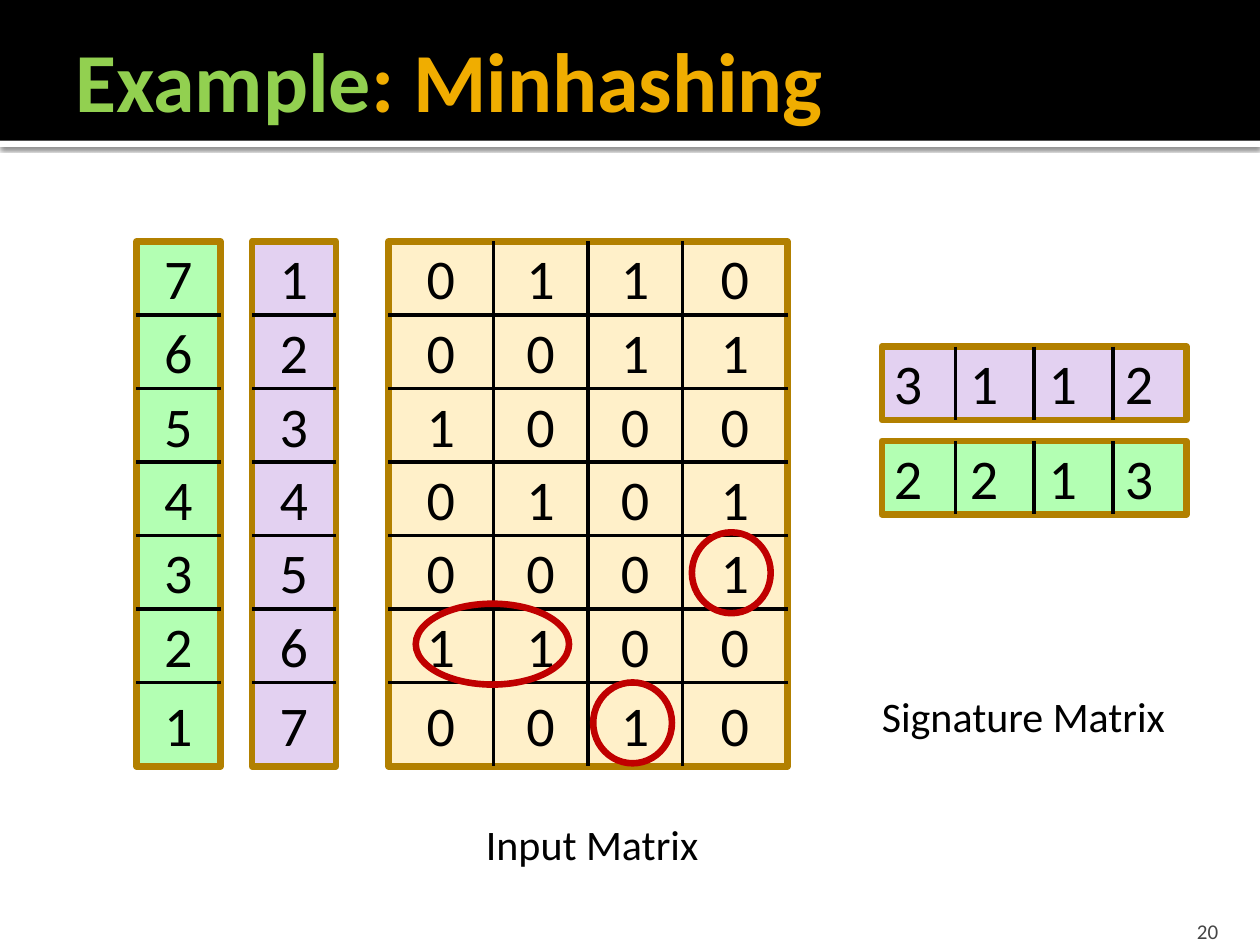
from dataclasses import dataclass

from lxml import etree
from pptx import Presentation
from pptx import util as u
from pptx.dml import color
from pptx.enum import shapes, text
from pptx.oxml import ns

COLS, ROWS = 120, 90
DIGIT_W, DIGIT_H = 5.1, 7.7
FONT = "Calibri"
COLORS = {
    "black": "000000", "white": "FFFFFF", "lime": "92D050", "amber": "F0AD00",
    "gray": "454545", "cream": "FFF0C9", "green": "B3FFB3", "violet": "E3D1F1",
    "border": "B28000", "red": "C00000",
}

prs = Presentation()
prs.slide_width, prs.slide_height = u.Inches(10), u.Inches(7.5)
s = prs.slides.add_slide(prs.slide_layouts[6])


@dataclass
class Matrix:
    col: float
    row: float
    width: float
    height: float
    fill: str
    values: list[str]
    first_col: float = 0
    col_step: float = 0
    row_step: float = 7
    shift: float = 0

    def col_edges(self) -> list[float]:
        inner = range(len(self.values[0]) - 1)
        return [self.col, *(self.col + self.first_col + i * self.col_step for i in inner),
                self.col + self.width]

    def row_edges(self) -> list[float]:
        inner = range(1, len(self.values))
        return [self.row, *(self.row + i * self.row_step for i in inner), self.row + self.height]


@dataclass
class Ring:
    col: float
    row: float
    width: float
    height: float = 7.7


def x(col: float) -> int:
    return round(prs.slide_width * col / COLS)


def y(row: float) -> int:
    return round(prs.slide_height * row / ROWS)


def rgb(name: str) -> color.RGBColor:
    return color.RGBColor.from_string(COLORS[name])


def add_figure(kind, col: float, row: float, width: float, height: float,
               fill: str | None = None, line: str | None = None):
    sp = s.shapes.add_shape(kind, x(col), y(row), x(width), y(height))
    sp.shadow.inherit = False
    if fill:
        sp.fill.solid()
        sp.fill.fore_color.rgb = rgb(fill)
    else:
        sp.fill.background()
    if line:
        sp.line.color.rgb = rgb(line)
        sp.line.width = u.Pt(3.78)
    else:
        sp.line.fill.background()
    return sp


def add_rule(col1: float, row1: float, col2: float, row2: float) -> None:
    c = s.shapes.add_connector(shapes.MSO_CONNECTOR.STRAIGHT, x(col1), y(row1), x(col2), y(row2))
    c.line.color.rgb = rgb("black")
    c.line.width = u.Pt(2.25)
    etree.SubElement(c._element.spPr, ns.qn("a:effectLst"))


def add_text(*runs: tuple[str, str], col: float, row: float, width: float, height: float,
             size: float, bold: bool = False, wrap: bool = False,
             align=text.PP_ALIGN.LEFT, anchor=text.MSO_ANCHOR.TOP) -> None:
    tf = s.shapes.add_textbox(x(col), y(row), x(width), y(height)).text_frame
    tf.word_wrap = wrap
    tf.vertical_anchor = anchor
    p = tf.paragraphs[0]
    p.alignment = align
    for words, shade in runs:
        r = p.add_run()
        r.text = words
        r.font.name, r.font.size, r.font.bold = FONT, u.Pt(size), bold
        r.font.color.rgb = rgb(shade)


def add_matrix(m: Matrix) -> None:
    add_figure(shapes.MSO_SHAPE.RECTANGLE, m.col, m.row, m.width, m.height, m.fill, "border")
    cols, rows = m.col_edges(), m.row_edges()
    for row in rows[1:-1]:
        add_rule(cols[0], row, cols[-1], row)
    for col in cols[1:-1]:
        add_rule(col, rows[0], col, rows[-1])
    for digits, top, bottom in zip(m.values, rows, rows[1:]):
        for digit, left, right in zip(digits, cols, cols[1:]):
            add_text((digit, "black"), col=(left + right - DIGIT_W) / 2 + m.shift,
                     row=(top + bottom - DIGIT_H) / 2, width=DIGIT_W, height=DIGIT_H, size=32)


def add_header() -> None:
    bar = add_figure(shapes.MSO_SHAPE.RECTANGLE, 0, 13.4, COLS, 0.6, "white")
    effects = bar._element.spPr.find(ns.qn("a:effectLst"))
    shadow = etree.SubElement(effects, ns.qn("a:outerShdw"), blurRad=str(u.Pt(2.5)),
                              dist=str(u.Pt(0.8)), dir="5400000", rotWithShape="0")
    shade = etree.SubElement(shadow, ns.qn("a:srgbClr"), val=COLORS["black"])
    etree.SubElement(shade, ns.qn("a:alpha"), val="60000")
    add_figure(shapes.MSO_SHAPE.RECTANGLE, 0, 0, COLS, 13.4, "black")
    add_text(("Example", "lime"), (": Minhashing", "amber"), col=6, row=2, width=114, height=11,
             size=48, bold=True, wrap=True, anchor=text.MSO_ANCHOR.MIDDLE)


MATRICES = [
    Matrix(37, 23, 38, 50, "cream",
           ["0110", "0011", "1000", "0101", "0001", "1100", "0010"], first_col=10, col_step=9),
    Matrix(13, 23, 8, 50, "green", list("7654321")),
    Matrix(24, 23, 8, 50, "violet", list("1234567")),
    Matrix(84, 42, 29, 7, "green", ["2213"], first_col=7, col_step=7.5, shift=-1),
    Matrix(84, 33, 29, 7, "violet", ["3112"], first_col=7, col_step=7.5, shift=-1),
]
RINGS = [Ring(39.6, 57.5, 14.6), Ring(56.5, 65, 7.5), Ring(65.9, 50.7, 7.5)]


def main() -> None:
    add_header()
    for m in MATRICES:
        add_matrix(m)
    add_text(("Input Matrix", "black"), col=45.1, row=77.4, width=22.8, height=6, size=24)
    add_text(("Signature Matrix", "black"), col=82.8, row=65.2, width=30.4, height=6, size=24)
    for ring in RINGS:
        add_figure(shapes.MSO_SHAPE.OVAL, ring.col, ring.row, ring.width, ring.height, line="red")
    add_text(("20", "gray"), col=107.6, row=86.9, width=9.6, height=3.6, size=12, wrap=True,
             align=text.PP_ALIGN.RIGHT, anchor=text.MSO_ANCHOR.BOTTOM)
    prs.save("out.pptx")


if __name__ == "__main__":
    main()
